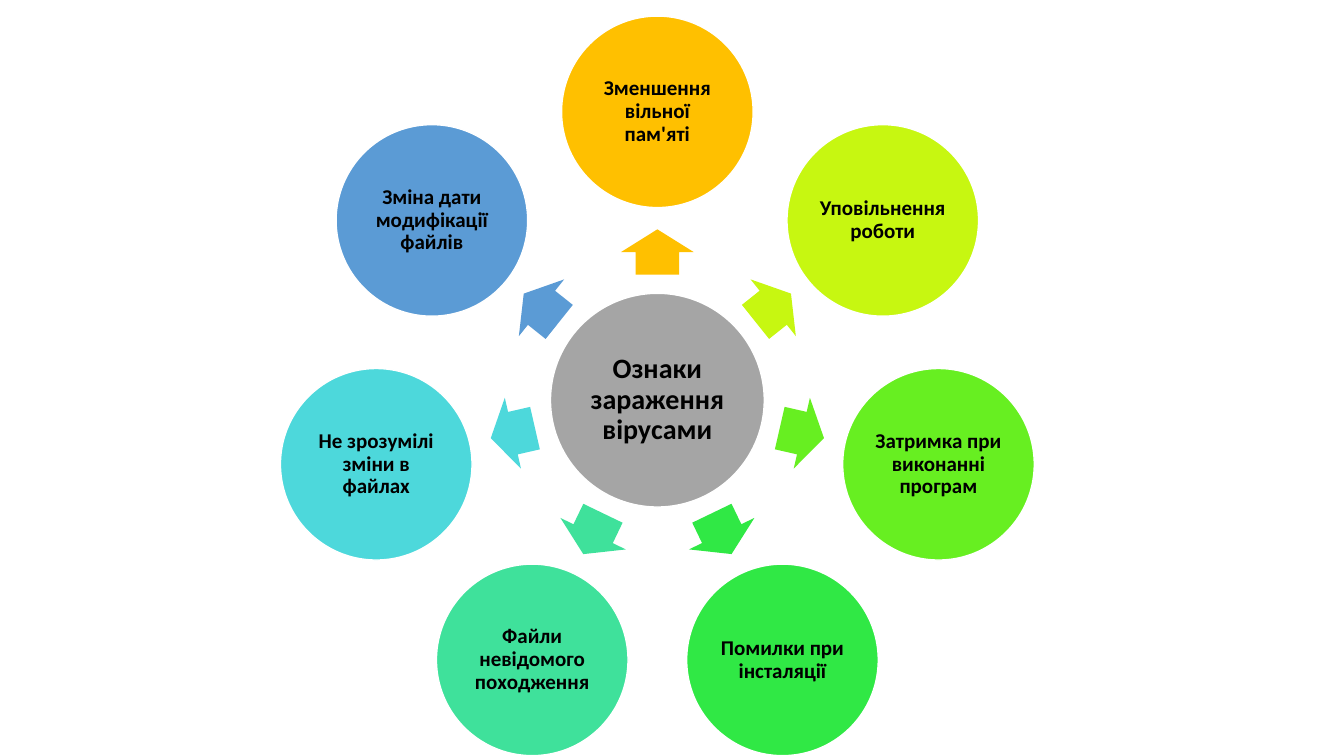
from dataclasses import dataclass
from math import cos, radians, sin

from pptx import Presentation
from pptx.dml.color import RGBColor
from pptx.enum.shapes import MSO_SHAPE
from pptx.enum.text import MSO_ANCHOR, PP_ALIGN
from pptx.shapes.autoshape import Shape
from pptx.util import Inches, Pt

MID_X, MID_Y = 6.52, 3.97
HUB_SIZE, SIGN_SIZE = 2.12, 1.9
SIGN_REACH, ARROW_REACH = 2.86, 1.47
ARROW_WIDTH, ARROW_HEIGHT = 0.45, 0.72


@dataclass
class Sign:
    text: str
    color: str


SIGNS = [
    Sign("Зменшення вільної пам'яті", "FFC000"),
    Sign("Уповільнення роботи", "C7F711"),
    Sign("Затримка при виконанні програм", "67EF21"),
    Sign("Помилки при інсталяції", "30E845"),
    Sign("Файли невідомого походження", "3FE19B"),
    Sign("Не зрозумілі зміни в файлах", "4DD8DB"),
    Sign("Зміна дати модифікації файлів", "5B9BD5"),
]

deck = Presentation()
deck.slide_width, deck.slide_height = Inches(13.33), Inches(7.5)
slide = deck.slides.add_slide(deck.slide_layouts[6])


def rgb(color: str) -> RGBColor:
    return RGBColor.from_string(color)


def add_form(kind: MSO_SHAPE, x: float, y: float, width: float,
             height: float, color: str) -> Shape:
    """Add a filled shape centred on x, y."""
    form = slide.shapes.add_shape(
        kind, Inches(x - width / 2), Inches(y - height / 2),
        Inches(width), Inches(height))
    form.shadow.inherit = False
    form.fill.solid()
    form.fill.fore_color.rgb = rgb(color)
    form.line.fill.background()
    return form


def add_circle(x: float, y: float, size: float, color: str,
               text: str, points: int, inset: float) -> None:
    circle = add_form(MSO_SHAPE.OVAL, x, y, size, size, color)
    circle.line.color.rgb = rgb("FFFFFF")
    circle.line.width = Pt(1)
    frame = circle.text_frame
    frame.word_wrap = True
    frame.vertical_anchor = MSO_ANCHOR.MIDDLE
    frame.margin_left = frame.margin_right = Inches(inset)
    frame.margin_top = frame.margin_bottom = Inches(inset)
    para = frame.paragraphs[0]
    para.text = text
    para.alignment = PP_ALIGN.CENTER
    para.line_spacing = 0.9
    para.font.name = "Calibri"
    para.font.size = Pt(points)
    para.font.bold = True
    para.font.color.rgb = rgb("000000")


def add_arrow(x: float, y: float, angle: float, color: str) -> None:
    arrow = add_form(MSO_SHAPE.RIGHT_ARROW, x, y,
                     ARROW_WIDTH, ARROW_HEIGHT, color)
    arrow.adjustments[0] = 0.6
    arrow.adjustments[1] = 0.5
    arrow.rotation = angle


def add_sign(sign: Sign, angle: float) -> None:
    """Add an arrow and its circle at a clockwise angle from the right."""
    dx, dy = cos(radians(angle)), sin(radians(angle))
    add_arrow(MID_X + ARROW_REACH * dx, MID_Y + ARROW_REACH * dy,
              angle, sign.color)
    add_circle(MID_X + SIGN_REACH * dx, MID_Y + SIGN_REACH * dy,
               SIGN_SIZE, sign.color, sign.text, 15, 0.02)


add_circle(MID_X, MID_Y, HUB_SIZE, "A5A5A5",
           "Ознаки зараження вірусами", 20, 0.03)
for index, sign in enumerate(SIGNS):
    add_sign(sign, (270 + index * 360 / len(SIGNS)) % 360)

deck.save("out.pptx")
